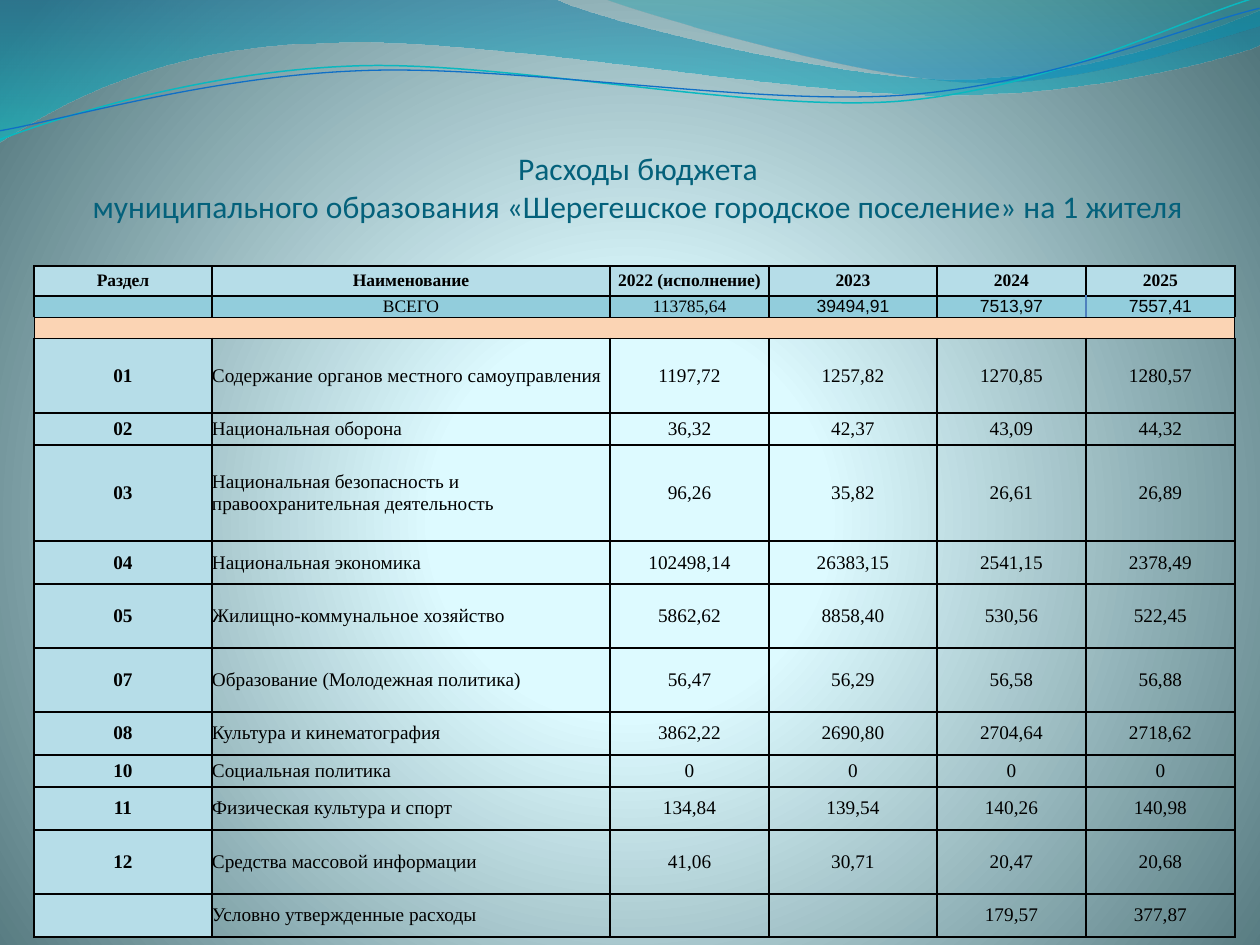
from lxml.etree import SubElement
from pptx import Presentation
from pptx.dml.color import RGBColor as RGB
from pptx.enum.text import MSO_ANCHOR as ANCHOR, PP_ALIGN as ALIGN
from pptx.oxml import parse_xml
from pptx.oxml.ns import nsdecls, qn
from pptx.util import Emu, Pt

BLACK = RGB(0x00, 0x00, 0x00)
TITLE_BLUE = RGB(0x04, 0x61, 0x7B)
PALE_BLUE = RGB(0xB6, 0xDD, 0xE8)
TOTAL_BLUE = RGB(0x92, 0xCD, 0xDC)
PEACH = RGB(0xFB, 0xD4, 0xB4)
ACCENT_BLUE = RGB(0x4F, 0x81, 0xBD)
GLOW = RGB(0xDE, 0xFB, 0xFF)
GLOW_EDGE = RGB(0xDD, 0xFA, 0xFF)
DEEP_GREY = RGB(0x52, 0x76, 0x7C)
WAVE_BLUE = RGB(0x00, 0x74, 0xA1)
WAVE_CYAN = RGB(0x00, 0xC6, 0xCF)
WAVE_TEAL = RGB(0x00, 0xA1, 0xA9)
WAVE_SKY = RGB(0x00, 0x8B, 0xBF)
LINE_CYAN = RGB(0x0A, 0xB8, 0xBF)
LINE_BLUE = RGB(0x0F, 0x6F, 0xC6)

DOWNWARD = '<a:lin ang="5400000" scaled="0"/>'
RADIAL = '<a:path path="circle"><a:fillToRect l="10000" t="110000" r="10000" b="100000"/></a:path>'

FRONT_WAVE = [(0, 0), (554, -1), (600, 21, 837, 79, 955, 79), (1075, 79, 1207, 33, 1260, 11),
              (1261, 45), (1239, 55, 1096, 96, 940, 95), (784, 95, 481, 35, 324, 43),
              (163, 45, 58, 105, -1, 142), (0, 0)]
RIGHT_WAVE = [(604, -1), (642, 14, 859, 78, 969, 82), (1079, 87, 1211, 40, 1260, 26),
              (1260, 0), (604, -1)]
CYAN_LINE = [(-3, 110), (59, 90, 200, 52, 350, 53), (499, 53, 745, 118, 896, 114),
             (1049, 109, 1184, 45, 1260, 27)]
BLUE_LINE = [(-2, 101), (57, 94, 207, 57, 357, 58), (509, 58, 750, 112, 902, 108),
             (1052, 104, 1187, 52, 1262, 38)]
LINE_TILT = 357.3

TITLE = "Расходы бюджета\vмуниципального образования «Шерегешское городское поселение» на 1 жителя"
COLUMN_WIDTHS = [178, 398, 159, 168, 149, 149]
HEADER_ROW, TOTAL_ROW, DIVIDER_ROW = range(3)
BUDGET = [
    (30, "Раздел", "Наименование", "2022 (исполнение)", "2023", "2024", "2025"),
    (16, "", "ВСЕГО", "113785,64", "39494,91", "7513,97", "7557,41"),
    (16, "", "", "", "", "", ""),
    (75, "01", "Содержание органов местного самоуправления", "1197,72", "1257,82", "1270,85", "1280,57"),
    (32, "02", "Национальная оборона", "36,32", "42,37", "43,09", "44,32"),
    (96, "03", "Национальная безопасность и правоохранительная деятельность",
     "96,26", "35,82", "26,61", "26,89"),
    (43, "04", "Национальная экономика", "102498,14", "26383,15", "2541,15", "2378,49"),
    (64, "05", "Жилищно-коммунальное хозяйство", "5862,62", "8858,40", "530,56", "522,45"),
    (64, "07", "Образование (Молодежная политика)", "56,47", "56,29", "56,58", "56,88"),
    (43, "08", "Культура и кинематография", "3862,22", "2690,80", "2704,64", "2718,62"),
    (32, "10", "Социальная политика", "0", "0", "0", "0"),
    (43, "11", "Физическая культура и спорт", "134,84", "139,54", "140,26", "140,98"),
    (64, "12", "Средства массовой информации", "41,06", "30,71", "20,47", "20,68"),
    (43, "", "Условно утвержденные расходы", "", "", "179,57", "377,87"),
]


def px(length):
    """Turn pixels into EMU."""
    return Emu(round(length * 914400 / 126))


def paint_gradient(owner, stops, direction):
    """Swap the owner's solid fill for a gradient of (position, colour, opacity) stops."""
    marks = "".join(
        f'<a:gs pos="{pos * 1000}"><a:srgbClr val="{color}"><a:alpha val="{opacity * 1000}"/>'
        f"</a:srgbClr></a:gs>" for pos, color, opacity in stops)
    gradient = parse_xml(f'<a:gradFill {nsdecls("a")} rotWithShape="1">'
                         f"<a:gsLst>{marks}</a:gsLst>{direction}</a:gradFill>")
    solid = owner.xpath(".//a:solidFill")[0]
    solid.getparent().replace(solid, gradient)


def add_curve(slide, left, top, segments, closed):
    """Draw an outline of straight (x, y) and cubic six-number segments."""
    start, *rest = segments
    builder = slide.shapes.build_freeform(*map(px, start))
    for segment in rest:
        knots = zip(segment[::2], segment[1::2])
        builder.add_line_segments([(px(x), px(y)) for x, y in knots], close=False)
    curve = builder.convert_to_shape(px(left), px(top))
    curve.shadow.inherit = False
    outline = curve._element.xpath(".//a:pathLst/a:path")[0]
    steps = iter(outline.findall(qn("a:lnTo")))
    for segment in rest:
        step = next(steps)
        if len(segment) == 6:
            step.tag = qn("a:cubicBezTo")
            for _ in range(2):
                follower = next(steps)
                step.append(follower[0])
                outline.remove(follower)
    if closed:
        SubElement(outline, qn("a:close"))
    return curve


def add_waves(slide, left, top):
    """Draw the translucent waves and thin lines of the page header."""
    for segments, stops in (
        (FRONT_WAVE, [(0, WAVE_BLUE, 45), (100, WAVE_CYAN, 55)]),
        (RIGHT_WAVE, [(0, WAVE_TEAL, 30), (80, WAVE_SKY, 45)]),
    ):
        wave = add_curve(slide, left, top, segments, True)
        wave.line.fill.background()
        wave.fill.solid()
        paint_gradient(wave._element, stops, DOWNWARD)
    for segments, color, width in ((CYAN_LINE, LINE_CYAN, 0.85), (BLUE_LINE, LINE_BLUE, 0.75)):
        strand = add_curve(slide, left, top, segments, False)
        strand.rotation = LINE_TILT
        strand.fill.background()
        strand.line.color.rgb = color
        strand.line.width = Pt(width)


def style_text(paragraph, font_name, size, color, bold=False, align=ALIGN.CENTER):
    """Set the font and alignment of one paragraph."""
    paragraph.alignment = align
    font = paragraph.font
    font.name, font.size, font.bold = font_name, Pt(size), bold
    font.color.rgb = color


def add_title(slide, left, top, width, height):
    """Write the two-line heading at the bottom of its box."""
    heading = slide.shapes.add_textbox(px(left), px(top), px(width), px(height)).text_frame
    heading.word_wrap = True
    heading.vertical_anchor = ANCHOR.BOTTOM
    heading.margin_left = heading.margin_right = heading.margin_bottom = 0
    heading.margin_top = px(6)
    heading.text = TITLE
    style_text(heading.paragraphs[0], "Calibri", 18, TITLE_BLUE)


def draw_borders(cell, row, column):
    """Rule the four sides of a budget cell."""
    side_width = 0.5 if row == DIVIDER_ROW else 1
    top_width = 0.5 if row in (DIVIDER_ROW, DIVIDER_ROW + 1) else 1
    bottom_width = 0.5 if row in (TOTAL_ROW, DIVIDER_ROW) else 1
    left_color = ACCENT_BLUE if (row, column) == (TOTAL_ROW, 5) else BLACK
    right_color = ACCENT_BLUE if (row, column) == (TOTAL_ROW, 4) else BLACK
    for side, width, color in (("L", side_width, left_color), ("R", side_width, right_color),
                               ("T", top_width, BLACK), ("B", bottom_width, BLACK)):
        rule = SubElement(cell._tc.get_or_add_tcPr(), qn(f"a:ln{side}"), w=str(Pt(width)))
        SubElement(SubElement(rule, qn("a:solidFill")), qn("a:srgbClr"), val=str(color))


def fill_cell(cell, row, column, text):
    """Write and style one budget cell."""
    cell.margin_left = cell.margin_right = cell.margin_top = cell.margin_bottom = 0
    cell.vertical_anchor = ANCHOR.MIDDLE
    draw_borders(cell, row, column)
    row_fill = {HEADER_ROW: PALE_BLUE, TOTAL_ROW: TOTAL_BLUE, DIVIDER_ROW: PEACH}.get(row)
    color = row_fill or (PALE_BLUE if column == 0 else None)
    if color:
        cell.fill.solid()
        cell.fill.fore_color.rgb = color
    else:
        cell.fill.background()
    body = row > DIVIDER_ROW
    size = 11 if body else 10
    cell.text = text
    paragraph = cell.text_frame.paragraphs[0]
    style_text(paragraph, "Arial" if row == TOTAL_ROW and column > 2 else "Times New Roman",
               size, BLACK, row == HEADER_ROW or (body and column == 0),
               ALIGN.LEFT if body and column == 1 else ALIGN.CENTER)
    if not text:
        SubElement(paragraph._p, qn("a:endParaRPr"), sz=str(size * 100))


def add_budget_table(slide, left, top, height):
    """Build the table of spending per resident."""
    frame = slide.shapes.add_table(len(BUDGET), len(COLUMN_WIDTHS), px(left), px(top),
                                   px(sum(COLUMN_WIDTHS)), px(height))
    table = frame.table
    table.first_row = table.horz_banding = False
    for column, width in zip(table.columns, COLUMN_WIDTHS):
        column.width = px(width)
    for r, (row_height, *texts) in enumerate(BUDGET):
        table.rows[r].height = px(row_height)
        for c, text in enumerate(texts):
            fill_cell(table.cell(r, c), r, c, text)
    table.cell(DIVIDER_ROW, 0).merge(table.cell(DIVIDER_ROW, len(COLUMN_WIDTHS) - 1))
    frame.height = px(height)


def main():
    """Build and save the budget slide."""
    deck = Presentation()
    deck.slide_width, deck.slide_height = px(1260), px(945)
    slide = deck.slides.add_slide(deck.slide_layouts[6])
    slide.background.fill.solid()
    paint_gradient(slide._element,
                   [(0, GLOW, 100), (25, GLOW_EDGE, 100), (100, DEEP_GREY, 100)], RADIAL)
    add_waves(slide, 0, 0)
    add_title(slide, 66, 136, 1144, 89)
    add_budget_table(slide, 34, 266, 672)
    deck.save("out.pptx")


if __name__ == "__main__":
    main()
